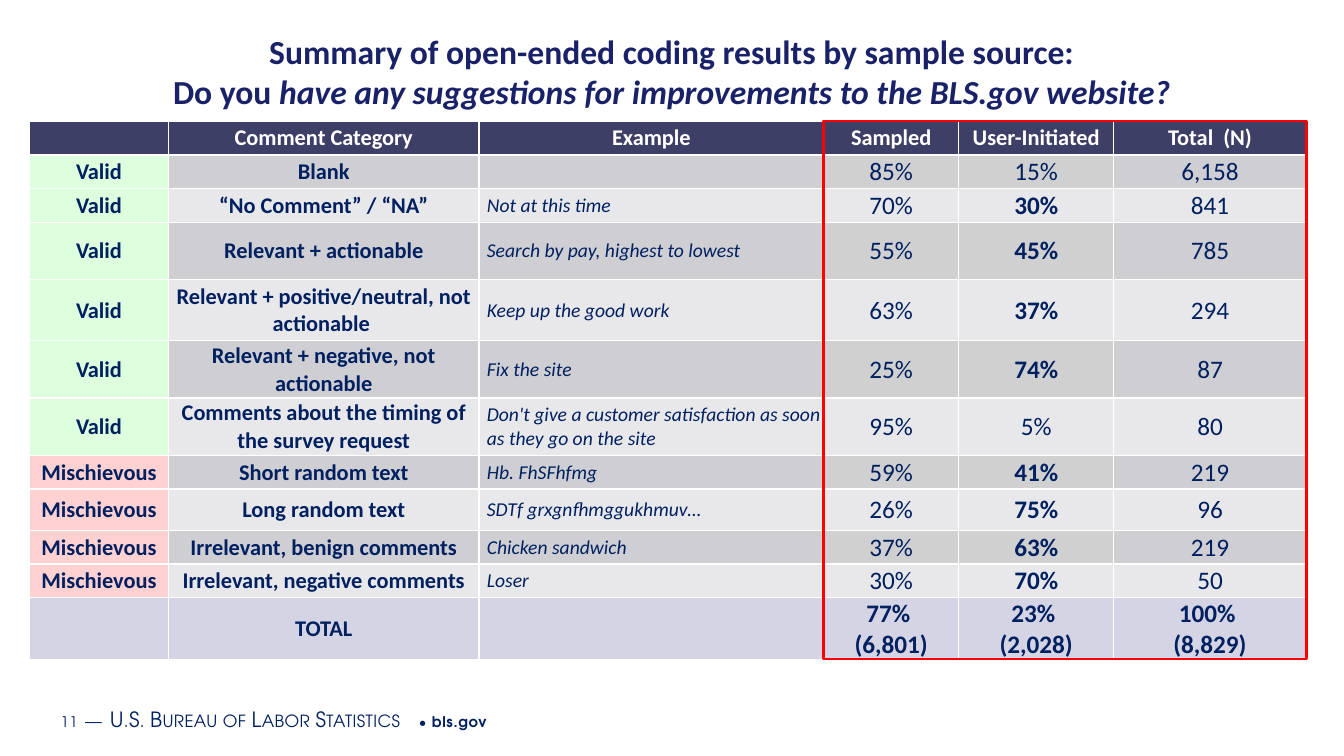
"""Build the slide that sums up survey comment codes by sample source."""
from lxml import etree
from pptx import Presentation
from pptx.dml.color import RGBColor
from pptx.enum.shapes import MSO_SHAPE
from pptx.enum.text import MSO_ANCHOR, PP_ALIGN
from pptx.oxml.ns import qn
from pptx.util import Cm, Pt

RECT = MSO_SHAPE.RECTANGLE
MIDDLE = MSO_ANCHOR.MIDDLE
CENTER, LEFT = PP_ALIGN.CENTER, PP_ALIGN.LEFT

WHITE = RGBColor(0xFF, 0xFF, 0xFF)
NAVY = RGBColor(0x00, 0x20, 0x60)
INDIGO = RGBColor(0x19, 0x21, 0x68)
SLATE = RGBColor(0x3E, 0x3F, 0x67)
GREEN = RGBColor(0xDD, 0xFF, 0xDD)
PINK = RGBColor(0xFF, 0xD1, 0xD1)
DARK = RGBColor(0xCE, 0xCE, 0xD3)
GRAY = RGBColor(0xD0, 0xD0, 0xD0)
LIGHT = RGBColor(0xE8, 0xE8, 0xEB)
LILAC = RGBColor(0xD4, 0xD4, 0xE5)
RED = RGBColor(0xFF, 0x00, 0x00)

TITLE = {"name": "Calibri", "size": Pt(24), "bold": True, "color": INDIGO}
LABEL = {"name": "Calibri", "size": Pt(16), "bold": True, "color": NAVY}
HEAD = {**LABEL, "color": WHITE}
QUOTE = {**LABEL, "size": Pt(14), "bold": False, "italic": True}
COUNT = {**LABEL, "size": Pt(18), "bold": False}
FOOT = {"name": "TeX Gyre Adventor", "size": Pt(10.5), "color": NAVY}
GAP = {**FOOT, "size": Pt(16)}
CAPS = {**FOOT, "size": Pt(15)}

SPACED = {"spc": "50"}
SMALL = {"spc": "30", "cap": "small"}

X, Y = 0.74, 3.05
WIDTHS = [3.51, 7.82, 8.69, 3.4, 3.91, 4.85]
HEIGHTS = [0.85, 0.85, 0.85, 1.44, 1.55, 1.44, 1.44, 0.85, 1.04, 0.85, 0.85, 1.55]
ROWS = [
    ("", "Comment Category", "Example", "Sampled", "User-Initiated", "Total  (N)"),
    ("Valid", "Blank", "", "85%", "15%", "6,158"),
    ("Valid", "“No Comment” / “NA”", "Not at this time", "70%", "30%", "841"),
    ("Valid", "Relevant + actionable", "Search by pay, highest to lowest", "55%", "45%", "785"),
    ("Valid", "Relevant + positive/neutral, not actionable ", "Keep up the good work",
     "63%", "37%", "294"),
    ("Valid", "Relevant + negative, not actionable", "Fix the site", "25%", "74%", "87"),
    ("Valid", "Comments about the timing of the survey request",
     "Don't give a customer satisfaction as soon as they go on the site", "95%", "5%", "80"),
    ("Mischievous", "Short random text", "Hb. FhSFhfmg", "59%", "41%", "219"),
    ("Mischievous", "Long random text", "SDTf grxgnfhmggukhmuv…", "26%", "75%", "96"),
    ("Mischievous", "Irrelevant, benign comments", "Chicken sandwich", "37%", "63%", "219"),
    ("Mischievous", "Irrelevant, negative comments", "Loser", "30%", "70%", "50"),
    ("", "TOTAL", "", "77% \n(6,801)", "23% \n(2,028)", "100% \n(8,829)"),
]
LAST = len(ROWS) - 1


def style(font, form):
    """Set font values from a dict."""
    for key, value in form.items():
        if key == "color":
            font.color.rgb = value
        else:
            setattr(font, key, value)


def add_run(para, text, form, extra=None):
    """Add a styled run, with extra run values if given."""
    run = para.add_run()
    run.text = text
    style(run.font, form)
    for key, value in (extra or {}).items():
        run.font._element.set(key, value)


def add_box(slide, left, top, width, height):
    """Add a wrapped text box and return its first paragraph."""
    frame = slide.shapes.add_textbox(Cm(left), Cm(top), Cm(width), Cm(height)).text_frame
    frame.word_wrap = True
    frame.vertical_anchor = MIDDLE
    frame.margin_left = frame.margin_right = Cm(0.18)
    frame.margin_top = frame.margin_bottom = Cm(0.1)
    return frame.paragraphs[0]


def cell_fill(row, col):
    """Pick the fill of a cell from its place."""
    if row == 0:
        return SLATE
    if row == LAST:
        return LILAC
    if col == 0:
        return GREEN if ROWS[row][0] == "Valid" else PINK
    if row % 2 == 0:
        return LIGHT
    return GRAY if col in (3, 4) else DARK


def cell_form(row, col):
    """Pick the text format of a cell from its place."""
    if row == 0:
        return HEAD
    if col < 2:
        return LABEL
    if col == 2:
        return QUOTE
    high = col == 4 and row < LAST and int(ROWS[row][col].rstrip("%")) >= 30
    return {**COUNT, "bold": high or row == LAST}


def add_edges(cell, row):
    """Draw white borders round a cell."""
    props = cell._tc.get_or_add_tcPr()
    for place, side in enumerate("LRTB"):
        thick = (row == 0 and side == "B") or (row == 1 and side == "T")
        line = etree.Element(qn(f"a:ln{side}"), w=str(Pt(1.5 if thick else 1)))
        fill = etree.SubElement(line, qn("a:solidFill"))
        etree.SubElement(fill, qn("a:srgbClr"), val=str(WHITE))
        props.insert(place, line)


def fill_cell(cell, row, col):
    """Write and format one table cell."""
    quote = col == 2 and row > 0
    form = {"vertical_anchor": MIDDLE, "margin_left": Cm(0.2 if quote else 0.02),
            "margin_right": Cm(0.02), "margin_top": Cm(0.02), "margin_bottom": Cm(0),
            "text": ROWS[row][col]}
    for key, value in form.items():
        setattr(cell, key, value)
    cell.fill.solid()
    cell.fill.fore_color.rgb = cell_fill(row, col)
    add_edges(cell, row)
    for para in cell.text_frame.paragraphs:
        para.alignment = LEFT if quote else CENTER
        for run in para.runs:
            style(run.font, cell_form(row, col))


def add_grid(slide):
    """Add the table of results."""
    table = slide.shapes.add_table(len(ROWS), len(WIDTHS), Cm(X), Cm(Y),
                                   Cm(sum(WIDTHS)), Cm(sum(HEIGHTS))).table
    table.first_row = table.horz_banding = False
    for col, width in enumerate(WIDTHS):
        table.columns[col].width = Cm(width)
    for row, height in enumerate(HEIGHTS):
        table.rows[row].height = Cm(height)
        for col in range(len(WIDTHS)):
            fill_cell(table.cell(row, col), row, col)


def add_frame(slide):
    """Outline the three count columns in red."""
    box = slide.shapes.add_shape(RECT, Cm(X + sum(WIDTHS[:3])), Cm(Y),
                                 Cm(sum(WIDTHS[3:])), Cm(sum(HEIGHTS)))
    box.shadow.inherit = False
    box.fill.background()
    box.line.color.rgb = RED
    box.line.width = Pt(2)


def main():
    """Build and save the slide."""
    deck = Presentation()
    deck.slide_width, deck.slide_height = Cm(33.87), Cm(19.05)
    slide = deck.slides.add_slide(deck.slide_layouts[6])

    foot = add_box(slide, 1.35, 17.6, 21.51, 1.02)
    for text, form, extra in [
        ("11", FOOT, SPACED), (" ", GAP, SPACED), ("—", CAPS, SMALL), (" ", GAP, SPACED),
        ("U.S. Bureau of Labor Statistics", CAPS, SMALL), (" • ", FOOT, SPACED),
        ("bls.gov", {**FOOT, "bold": True}, SPACED),
    ]:
        add_run(foot, text, form, extra)

    title = add_box(slide, 1.37, 0.56, 31.12, 2.46)
    title.alignment = CENTER
    add_run(title, "Summary of open-ended coding results by sample source:", TITLE)
    title.add_line_break()
    add_run(title, "Do you ", TITLE)
    add_run(title, "have any suggestions for improvements to the BLS.gov website?",
            {**TITLE, "italic": True})

    add_grid(slide)
    add_frame(slide)
    deck.save("out.pptx")


if __name__ == "__main__":
    main()
